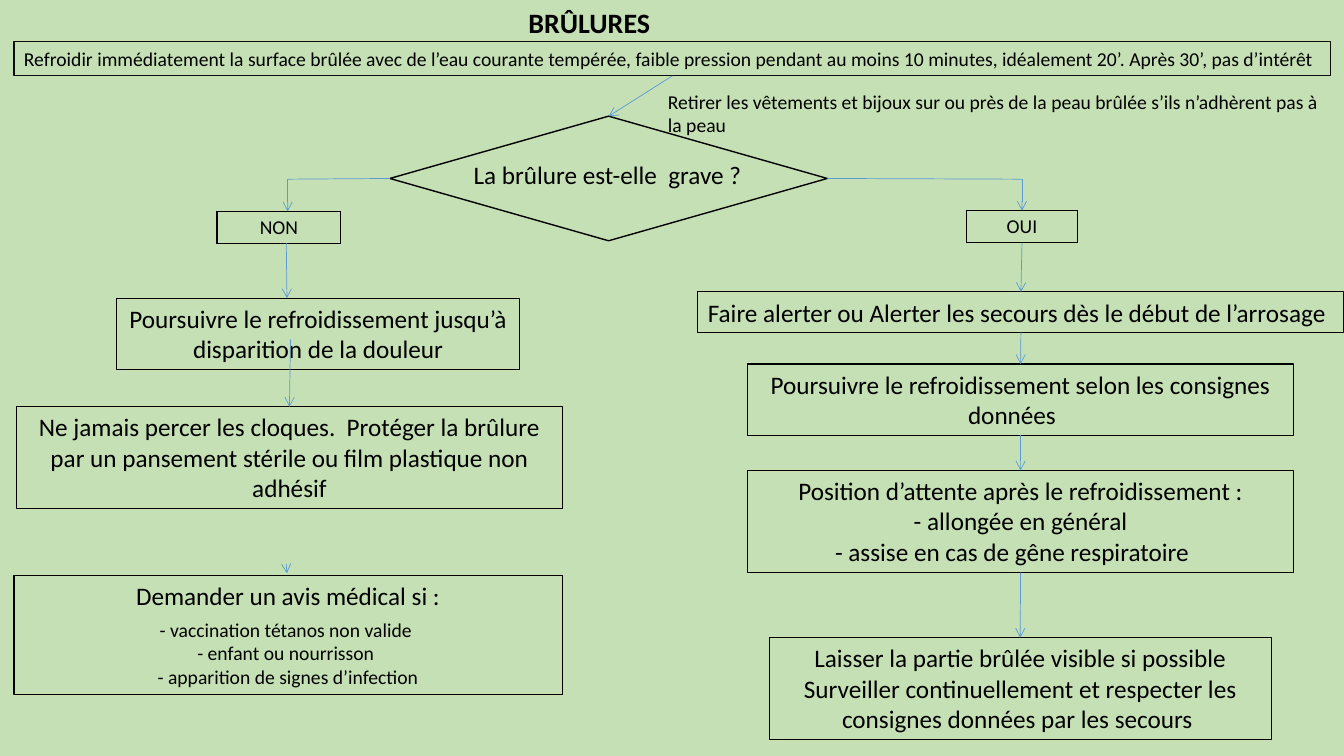
"""Draw the first-aid decision flow for burns on one slide."""
from lxml.etree import SubElement as Sub
from pptx import Presentation
from pptx.dml.color import RGBColor
from pptx.enum.shapes import MSO_CONNECTOR as Conn, MSO_SHAPE as Form
from pptx.enum.text import MSO_ANCHOR as Anchor, PP_ALIGN as Align
from pptx.oxml.ns import qn
from pptx.util import Pt

BLACK, BLUE, GREEN = "000000", "5B9BD5", "C5E0B4"
TOP, LEFT, BOTTOM, RIGHT = range(4)


def tint(hue):
    return RGBColor.from_string(hue)


def write(frame, text, size=18, bold=False, align=Align.CENTER, wrap=True, sizes=None, gaps=None):
    frame.word_wrap = wrap
    frame.vertical_anchor = Anchor.TOP
    for i, line in enumerate(text.split("\n")):
        para = frame.paragraphs[0] if i == 0 else frame.add_paragraph()
        para.alignment = align
        para.space_before = Pt((gaps or {}).get(i, 0))
        run = para.add_run()
        run.text = line
        font = run.font
        font.name, font.bold = "Calibri", bold
        font.size = Pt((sizes or {}).get(i, size))
        font.color.rgb = tint(BLACK)


class Flow:
    def __init__(self):
        self.deck = Presentation()
        self.deck.slide_width, self.deck.slide_height = Pt(960), Pt(540)
        self.slide = self.deck.slides.add_slide(self.deck.slide_layouts[5])
        self.shapes = self.slide.shapes
        fill = self.slide.background.fill
        fill.solid()
        fill.fore_color.rgb = tint(GREEN)

    def title(self, text, x, y, w, h):
        head = self.shapes.title
        head.left, head.top, head.width, head.height = map(Pt, (x, y, w, h))
        write(head.text_frame, text, size=20, bold=True, wrap=False)

    def label(self, text, x, y, w, h, **style):
        area = self.shapes.add_textbox(*map(Pt, (x, y, w, h)))
        write(area.text_frame, text, **style)

    def box(self, text, x, y, w, h, form=Form.RECTANGLE, line=BLACK, width=0.75, **style):
        box = self.shapes.add_shape(form, *map(Pt, (x, y, w, h)))
        box.shadow.inherit = False
        box.fill.background()
        box.line.color.rgb = tint(line)
        box.line.width = Pt(width)
        if text:
            write(box.text_frame, text, **style)
        return box

    def cell(self, text, x, y, w, h):
        table = self.shapes.add_table(1, 1, *map(Pt, (x, y, w, h))).table
        table.first_row = table.horz_banding = False
        cell = table.cell(0, 0)
        cell.margin_left = cell.margin_right = Pt(13)
        cell.margin_top = cell.margin_bottom = Pt(3)
        write(cell.text_frame, text, size=14)
        props = cell._tc.get_or_add_tcPr()
        for side in ("a:lnL", "a:lnR", "a:lnT", "a:lnB"):
            edge = Sub(props, qn(side), w=str(Pt(1)))
            Sub(Sub(edge, qn("a:solidFill")), qn("a:srgbClr"), val=BLACK)
        cell.fill.background()

    def link(self, x1, y1, x2, y2, start=None, end=None, arrow=True):
        link = self.shapes.add_connector(Conn.STRAIGHT, *map(Pt, (x1, y1, x2, y2)))
        link.line.color.rgb = tint(BLUE)
        link.line.width = Pt(0.5)
        if arrow:
            Sub(link.line._get_or_add_ln(), qn("a:tailEnd"), type="arrow")
        Sub(link._element.spPr, qn("a:effectLst"))
        if start:
            link.begin_connect(*start)
        if end:
            link.end_connect(*end)


def main():
    flow = Flow()
    flow.title("BRÛLURES ", 370, 0, 106.5, 31.5)
    cool = flow.box(
        "Refroidir immédiatement la surface brûlée avec de l’eau courante tempérée, faible pression "
        "pendant au moins 10 minutes, idéalement 20’. Après 30’, pas d’intérêt",
        10, 30, 940.5, 24.2, line="0D0D0D", size=14, align=Align.LEFT)
    flow.label("La brûlure est-elle  grave ? ", 318, 110, 236, 29)
    grave = flow.box("", 278.5, 83, 312.5, 89, form=Form.DIAMOND, width=1)
    flow.cell("OUI", 690.5, 150.5, 79, 23)
    flow.cell("NON", 155, 151, 88.5, 22)

    flow.box("Poursuivre le refroidissement jusqu’à\n disparition de la douleur ",
             83.5, 213, 287.5, 51, wrap=False)
    cover = flow.box("Ne jamais percer les cloques.  Protéger la brûlure par un pansement stérile "
                     "ou film plastique non adhésif", 11.5, 290.5, 390.5, 73)
    advice = flow.box("Demander un avis médical si :\n- vaccination tétanos non valide \n"
                      "- enfant ou nourrisson \n- apparition de signes d’infection",
                      10, 411, 391.5, 85, size=14, sizes={0: 18}, gaps={1: 5})

    alert = flow.box("Faire alerter ou Alerter les secours dès le début de l’arrosage",
                     498.5, 208.5, 461.5, 29, align=Align.LEFT, wrap=False)
    go_on = flow.box("Poursuivre le refroidissement selon les consignes données   ",
                     534, 260, 390, 51)
    wait = flow.box("Position d’attente après le refroidissement :\n - allongée en général \n"
                    "- assise en cas de gêne respiratoire   ", 534, 336, 390, 73)
    watch = flow.box("Laisser la partie brûlée visible si possible\nSurveiller continuellement et "
                     "respecter les consignes données par les secours ", 549.5, 455.5, 358.5, 73)

    flow.link(480, 54, 435, 83, (cool, BOTTOM), (grave, TOP))
    flow.link(278.5, 127.5, 205.5, 128, (grave, LEFT), arrow=False)
    flow.link(205.5, 128, 205.5, 151)
    flow.link(591, 127.5, 730, 128, (grave, RIGHT), arrow=False)
    flow.link(730, 128, 730, 150.5)
    flow.link(204.5, 173.5, 205, 213)
    flow.link(207.5, 242.5, 207, 290.5, end=(cover, TOP))
    flow.link(204.5, 404, 205, 409.5)
    flow.link(730, 173.5, 729, 208.5, end=(alert, TOP))
    for above, below in ((alert, go_on), (go_on, wait), (wait, watch)):
        flow.link(0, 0, 0, 0, (above, BOTTOM), (below, TOP))

    flow.label("Retirer les vêtements et bijoux sur ou près de la peau brûlée s’ils n’adhèrent pas à "
               "la peau", 470, 60.5, 480, 41, size=14, align=Align.LEFT)
    flow.deck.save("out.pptx")


if __name__ == "__main__":
    main()
